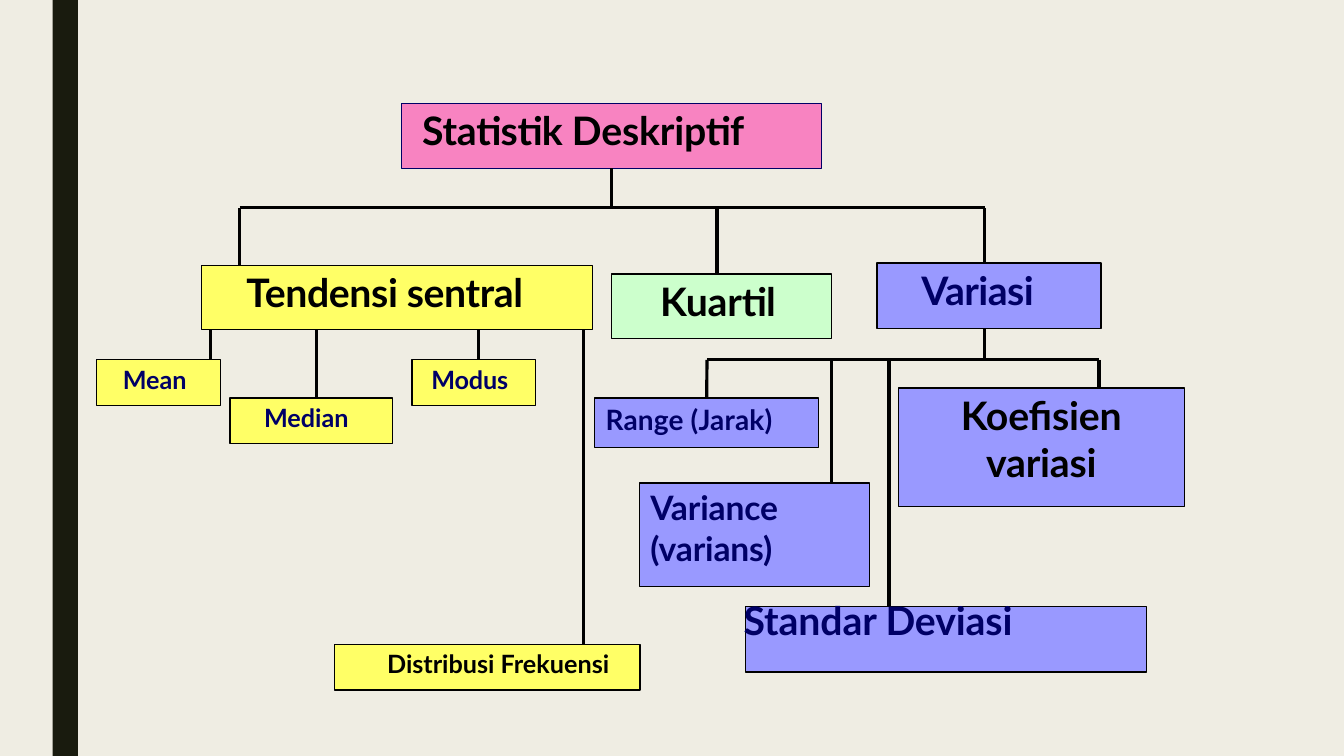
from pptx import Presentation
from pptx import util as u
from pptx.dml.color import RGBColor
from pptx.enum import shapes, text
from pptx.oxml.ns import qn
from lxml import etree

THEME = {
    "font": "Lato", "background": "EFEDE3", "side_bar": "191B0E",
    "black": "000000", "navy": "000066", "pink": "F883C1",
    "yellow": "FFFF66", "green": "CCFFCC", "violet": "9999FF",
    "large": 28, "medium": 24, "small": 20, "tiny": 18,
    "outline": 0.96, "branch": 2.28,
}

# Boxes: left, top, width, height, fill, lines, size, text colour, left inset, tracking
BOXES = {
    "root": (287, 74, 300, 46.3, "pink", ["Statistik Deskriptif"], "large", "black", 14.5, -0.1),
    "central": (144, 189.4, 279.4, 46, "yellow", ["Tendensi sentral"], "large", "black", 32, -0.25),
    "quartile": (437, 195.8, 157, 46.2, "green", ["Kuartil"], "large", "black", 34.5, -0.1),
    "variation": (626.5, 187.9, 160, 46.8, "violet", ["Variasi"], "large", "navy", 31.7, -0.4),
    "mean": (69, 257, 88.4, 32.5, "yellow", ["Mean"], "tiny", "navy", 18.7, 0),
    "median": (164.2, 284.4, 116, 32.5, "yellow", ["Median"], "tiny", "navy", 24.4, 0),
    "mode": (294.2, 257, 88.4, 32.5, "yellow", ["Modus"], "tiny", "navy", 13.9, -0.1),
    "frequency": (239, 460.3, 218.3, 32.7, "yellow", ["Distribusi Frekuensi"], "tiny", "black", 37.5, 0),
    "range": (424.8, 284.4, 160, 35.2, "violet", ["Range (Jarak)"], "small", "navy", 7.8, 0.1),
    "variance": (456.6, 345.1, 164.4, 73.8, "violet", ["Variance", "(varians)"], "medium", "navy", 8, -0.1),
    "deviation": (532.6, 433.4, 286.4, 46.6, "violet", [], "large", "navy", 0, 0),
    "coefficient": (641.6, 277.2, 204.4, 84.7, "violet", ["Koefisien", "variasi"], "large", "black", 0, -0.15),
}
CENTRED = {"coefficient"}
DEVIATION_LABEL = ("Standar Deviasi", 531.2, 425.9, 290, 34)

# Horizontal bars: left, right, y
TOP_BAR = (171.2, 703.4, 148.4)
VARIATION_BAR = (505, 785, 257)

# Vertical drops: start (a box's bottom or a bar's y), x, child box
DROPS = [
    (TOP_BAR[2], 171.2, "central"), (TOP_BAR[2], 512.2, "quartile"),
    (TOP_BAR[2], 703.4, "variation"),
    ("central", 150.5, "mean"), ("central", 226, "median"),
    ("central", 342, "mode"), ("central", 417, "frequency"),
    (VARIATION_BAR[2], 594, "variance"), (VARIATION_BAR[2], 635, "deviation"),
    (VARIATION_BAR[2], 785, "coefficient"),
]


def color(name):
    return RGBColor.from_string(THEME[name])


def write(shape, lines, size="large", ink="black", left=0, top=0, tracking=0, centred=False):
    frame = shape.text_frame
    frame.word_wrap = True
    frame.vertical_anchor = text.MSO_ANCHOR.TOP
    frame.margin_left, frame.margin_top = u.Pt(left), u.Pt(top)
    frame.margin_right = frame.margin_bottom = 0
    for index, line in enumerate(lines):
        paragraph = frame.paragraphs[0] if index == 0 else frame.add_paragraph()
        paragraph.alignment = text.PP_ALIGN.CENTER if centred else text.PP_ALIGN.LEFT
        run = paragraph.add_run()
        run.text = line
        run.font.name, run.font.size, run.font.bold = THEME["font"], u.Pt(THEME[size]), True
        run.font.color.rgb = color(ink)
        run.font._element.set("spc", str(round(tracking * 100)))


def add_rectangle(slide, left, top, width, height, fill, outline=None):
    shape = slide.shapes.add_shape(
        shapes.MSO_SHAPE.RECTANGLE, u.Pt(left), u.Pt(top), u.Pt(width), u.Pt(height))
    shape.shadow.inherit = False
    shape.fill.solid()
    shape.fill.fore_color.rgb = color(fill)
    if outline:
        shape.line.color.rgb = color(outline)
        shape.line.width = u.Pt(THEME["outline"])
    else:
        shape.line.fill.background()
    return shape


def add_branch(slide, x1, y1, x2, y2):
    connector = slide.shapes.add_connector(
        shapes.MSO_CONNECTOR.STRAIGHT, u.Pt(x1), u.Pt(y1), u.Pt(x2), u.Pt(y2))
    connector.line.color.rgb = color("black")
    connector.line.width = u.Pt(THEME["branch"])
    etree.SubElement(connector._element.spPr, qn("a:effectLst"))
    return connector


def main():
    presentation = Presentation()
    presentation.slide_width, presentation.slide_height = u.Pt(960), u.Pt(540)
    slide = presentation.slides.add_slide(presentation.slide_layouts[6])
    slide.background.fill.solid()
    slide.background.fill.fore_color.rgb = color("background")

    # Side bar
    add_rectangle(slide, 37.6, 0, 18, 540, "side_bar")

    # Boxes
    nodes = {}
    for name, (left, top, width, height, fill, lines, size, ink, inset, tracking) in BOXES.items():
        outline = "navy" if name == "root" else "black"
        nodes[name] = add_rectangle(slide, left, top, width, height, fill, outline)
        if lines:
            write(nodes[name], lines, size=size, ink=ink, left=inset,
                  top=2 if size == "large" else 3, tracking=tracking, centred=name in CENTRED)

    # Bars and drops
    for left, right, y in (TOP_BAR, VARIATION_BAR):
        add_branch(slide, left, y, right, y)
    for start, x, child in DROPS:
        y = start if start not in nodes else BOXES[start][1] + BOXES[start][3]
        add_branch(slide, x, y, x, BOXES[child][1])

    # Stems around the variation and root boxes
    root_x = BOXES["root"][0] + BOXES["root"][2] / 2
    stem = add_branch(slide, root_x, 120.3, root_x, TOP_BAR[2])
    stem.begin_connect(nodes["root"], 2)
    add_branch(slide, 703.4, 234.7, 703.4, VARIATION_BAR[2])
    range_x = VARIATION_BAR[0]
    range_drop = add_branch(slide, range_x, VARIATION_BAR[2], range_x, BOXES["range"][1])
    range_drop.end_connect(nodes["range"], 0)

    # Label that rises above its box
    label, *place = DEVIATION_LABEL
    box = slide.shapes.add_textbox(*(u.Pt(length) for length in place))
    write(box, [label], ink="navy", tracking=-0.05)

    presentation.save("out.pptx")


if __name__ == "__main__":
    main()
